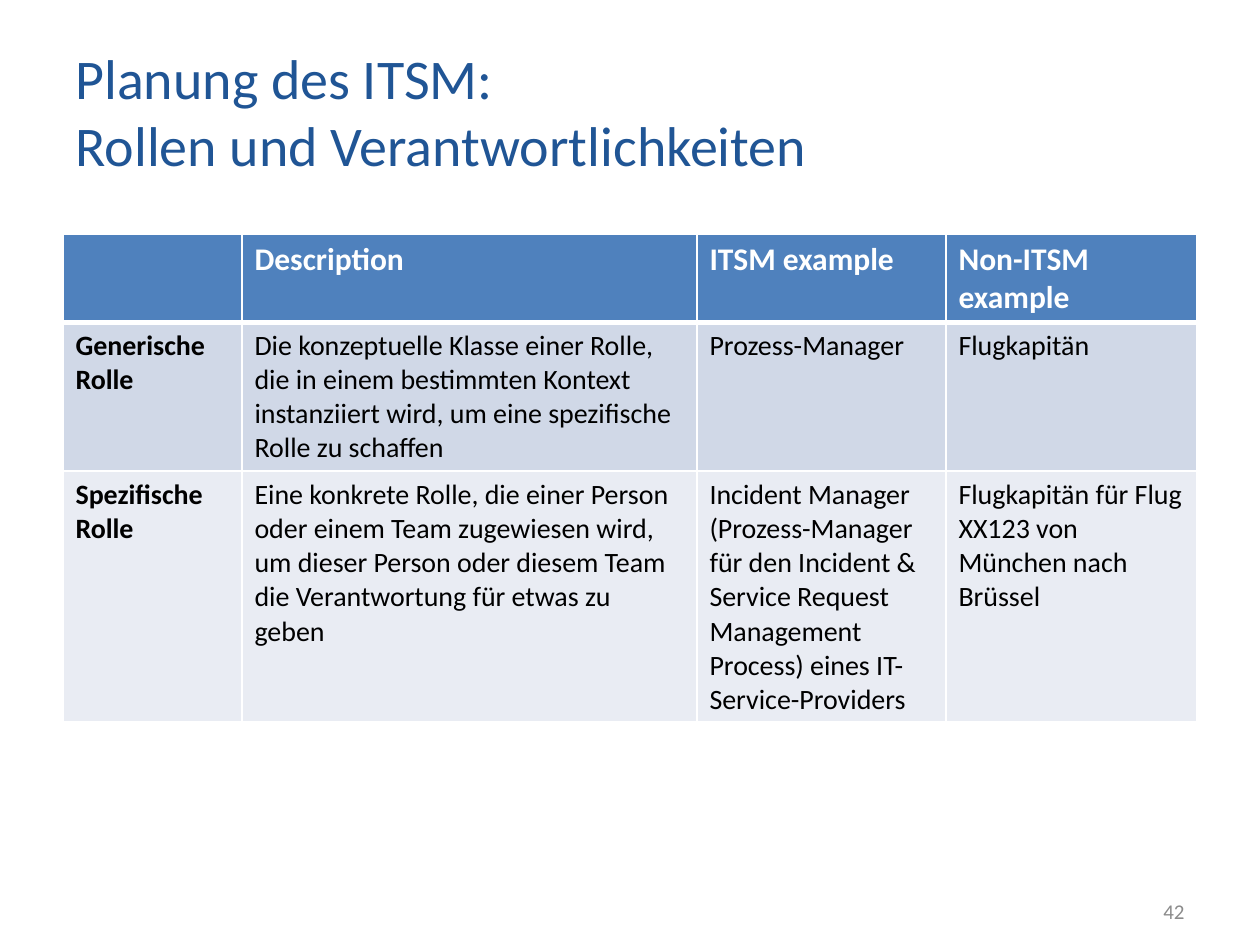
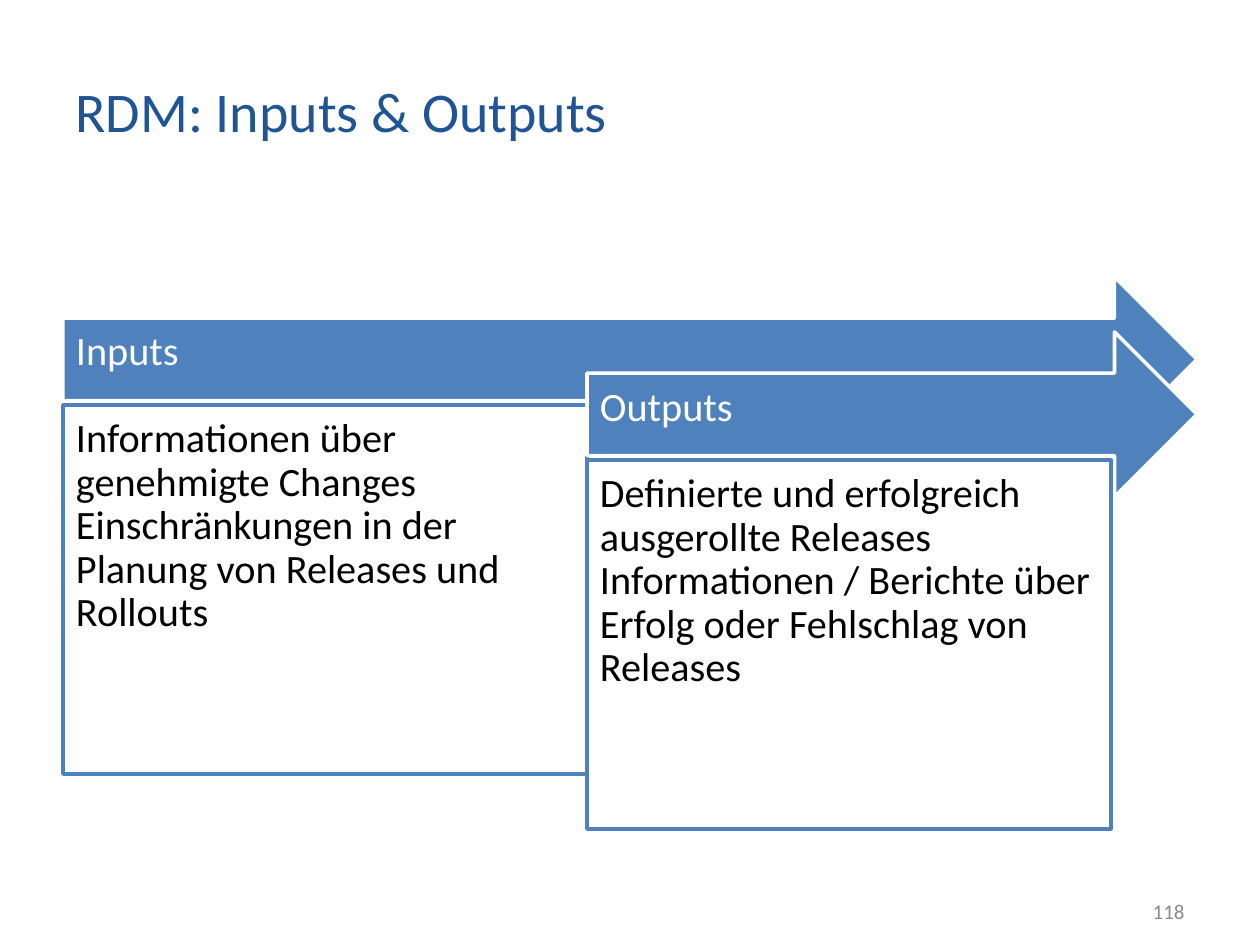
"""Builds two slides on roles in ITSM and on RDM inputs and outputs."""
from lxml import etree
from pptx import Presentation
from pptx import util as u
from pptx.dml.color import RGBColor
from pptx.enum import shapes, text
from pptx.oxml.ns import qn

PX = u.Inches(1) / 126
FONT = "Calibri"
BLUE, TITLE_BLUE, GREY = "4F81BD", "205595", "8B8B8B"
WHITE, BLACK = "FFFFFF", "000000"
ROW_FILLS = [BLUE, "D0D8E7", "E9ECF3"]
LEFT = 63
CONTENT_WIDTH = 1134

ROLES = [
    ["", "Description", "ITSM example", "Non-ITSM example"],
    ["Generische Rolle",
     "Die konzeptuelle Klasse einer Rolle, die in einem bestimmten Kontext "
     "instanziiert wird, um eine spezifische Rolle zu schaffen",
     "Prozess-Manager", "Flugkapitän"],
    ["Spezifische Rolle",
     "Eine konkrete Rolle, die einer Person oder einem Team zugewiesen wird, "
     "um dieser Person oder diesem Team die Verantwortung für etwas zu geben",
     "Incident Manager (Prozess-Manager für den Incident & Service Request "
     "Management Process) eines IT-Service-Providers",
     "Flugkapitän für Flug XX123 von München nach Brüssel"],
]
COLUMN_WIDTHS = [179, 455, 249, 251]
ROW_HEIGHTS = [88, 149, 251]

STAGES = [
    ("Inputs", ["Informationen über genehmigte Changes",
                "Einschränkungen in der Planung von Releases und Rollouts"]),
    ("Outputs", ["Definierte und erfolgreich ausgerollte Releases",
                 "Informationen / Berichte über Erfolg oder Fehlschlag von Releases"]),
]


def px(length):
    """Turn px into EMU."""
    return u.Emu(round(length * PX))


def color(hex_value):
    """Turn a hex string into a colour."""
    return RGBColor.from_string(hex_value)


def write(frame, paragraphs, size=16, fill=BLACK, bold=False,
          align=text.PP_ALIGN.LEFT, spacing=1.0):
    """Fill a text frame with formatted paragraphs."""
    frame.word_wrap = True
    for index, content in enumerate(paragraphs):
        paragraph = frame.add_paragraph() if index else frame.paragraphs[0]
        paragraph.text = content
        paragraph.alignment = align
        paragraph.line_spacing = spacing
        for run in paragraph.runs:
            run.font.name = FONT
            run.font.size = u.Pt(size)
            run.font.bold = bold
            run.font.color.rgb = color(fill)


def add_label(slide, content, left, top, width, height, **style):
    """Add a vertically centred text box."""
    frame = slide.shapes.add_textbox(px(left), px(top), px(width), px(height)).text_frame
    frame.vertical_anchor = text.MSO_ANCHOR.MIDDLE
    write(frame, [content], **style)


def add_slide(presentation, title, number):
    """Add a blank slide with its title and page number."""
    slide = presentation.slides.add_slide(presentation.slide_layouts[6])
    add_label(slide, title, LEFT, 38, 1013, 145, size=32, fill=TITLE_BLUE)
    add_label(slide, str(number), 903, 886, 294, 50, size=12, fill=GREY,
              align=text.PP_ALIGN.RIGHT)
    return slide


def add_borders(cell, widths):
    """Draw white cell borders, given as widths in points by side."""
    properties = cell._tc.get_or_add_tcPr()
    for side in ("L", "R", "T", "B"):
        line = etree.SubElement(properties, qn(f"a:ln{side}"),
                                w=str(u.Pt(widths.get(side, 0.96))))
        solid = etree.SubElement(line, qn("a:solidFill"))
        etree.SubElement(solid, qn("a:srgbClr"), val=WHITE)


def add_roles_table(slide):
    """Add the table that compares generic and specific roles."""
    table = slide.shapes.add_table(
        len(ROLES), len(COLUMN_WIDTHS), px(LEFT), px(234),
        px(CONTENT_WIDTH), px(sum(ROW_HEIGHTS))).table
    for column, width in zip(table.columns, COLUMN_WIDTHS):
        column.width = px(width)
    header_rules = {0: {"B": 3}, 1: {"T": 3}}
    for row, (contents, height) in enumerate(zip(ROLES, ROW_HEIGHTS)):
        table.rows[row].height = px(height)
        header = row == 0
        for column, content in enumerate(contents):
            cell = table.cell(row, column)
            add_borders(cell, header_rules.get(row, {}))
            cell.fill.solid()
            cell.fill.fore_color.rgb = color(ROW_FILLS[row])
            write(cell.text_frame, [content], size=18 if header else 16,
                  fill=WHITE if header else BLACK, bold=header or column == 0)


def add_block(slide, kind, box, paragraphs, fill, line, ink, anchor, insets):
    """Add an outlined preset shape with text."""
    shape = slide.shapes.add_shape(kind, *map(px, box))
    shape.shadow.inherit = False
    shape.fill.solid()
    shape.fill.fore_color.rgb = color(fill)
    shape.line.color.rgb = color(line)
    shape.line.width = u.Pt(2)
    frame = shape.text_frame
    frame.vertical_anchor = anchor
    frame.margin_left, frame.margin_top, frame.margin_right, frame.margin_bottom = map(px, insets)
    write(frame, paragraphs, size=23, fill=ink, spacing=0.9)


def add_stage(slide, index, heading, details):
    """Add an arrow with its detail box, stepped right and down by index."""
    box_width = 524
    left, top = LEFT + index * box_width, 277 + index * 55
    add_block(slide, shapes.MSO_SHAPE.RIGHT_ARROW,
              (left, top, LEFT + CONTENT_WIDTH - left, 165), [heading],
              BLUE, WHITE, WHITE, text.MSO_ANCHOR.MIDDLE, (13, 13, 35, 26))
    add_block(slide, shapes.MSO_SHAPE.RECTANGLE,
              (left, top + 128, box_width, 369), details,
              WHITE, BLUE, BLACK, text.MSO_ANCHOR.TOP, (13, 13, 13, 13))


def main():
    """Build and save the presentation."""
    presentation = Presentation()
    presentation.slide_width, presentation.slide_height = px(1260), px(945)
    roles = add_slide(presentation, "Planung des ITSM:\nRollen und Verantwortlichkeiten", 42)
    add_roles_table(roles)
    releases = add_slide(presentation, "RDM: Inputs & Outputs", 118)
    for index, (heading, details) in enumerate(STAGES):
        add_stage(releases, index, heading, details)
    presentation.save("out.pptx")


if __name__ == "__main__":
    main()
